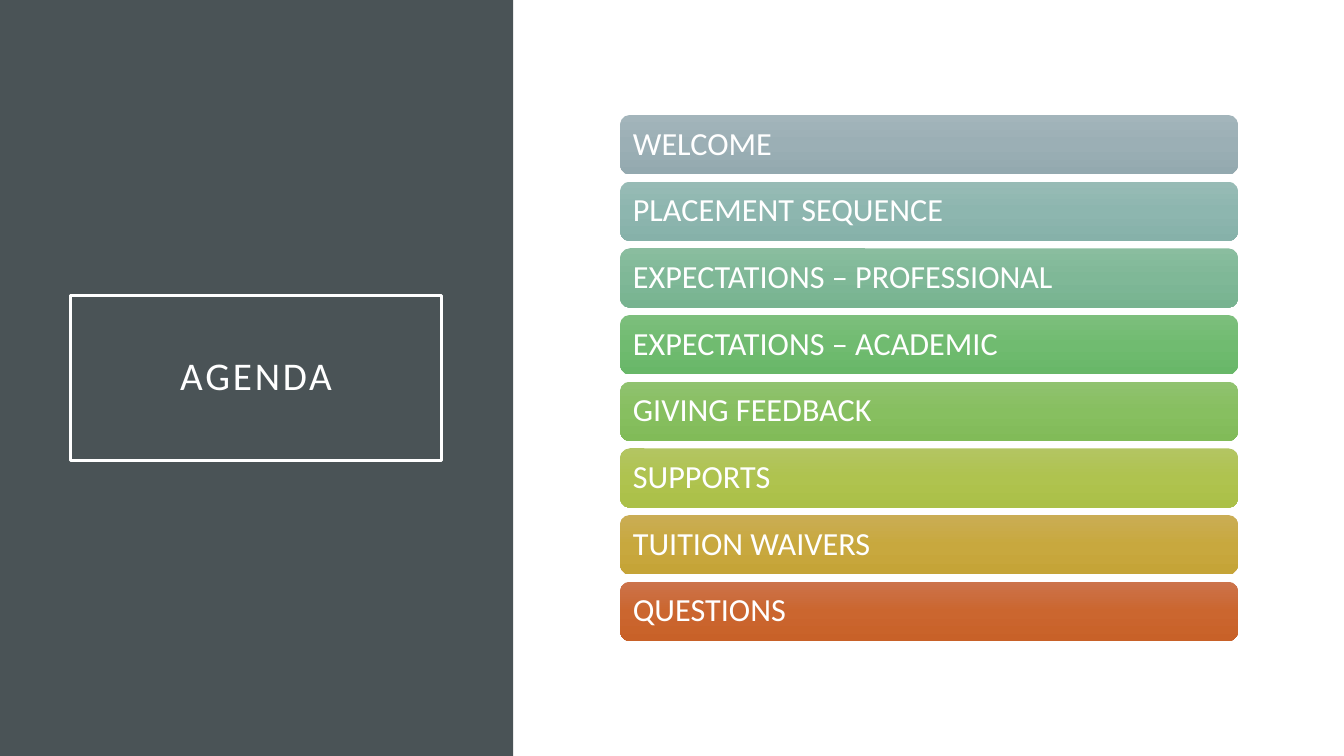
import copy
import pptx
import pptx.util
import pptx.dml.color
import pptx.enum.shapes
import pptx.enum.text
from pptx.util import Inches, Pt

FONT = "Calibri"
WHITE = "FFFFFF"
SHAPE = pptx.enum.shapes.MSO_SHAPE
ALIGN = pptx.enum.text.PP_ALIGN

# Agenda items with top, middle and bottom bar colours
ITEMS = [
    ("WELCOME", ("A3B5BB", "9BAFB5", "93A9AF")),
    ("PLACEMENT SEQUENCE", ("97BBB5", "8DB6AF", "86B1A9")),
    ("EXPECTATIONS – PROFESSIONAL", ("8ABD9F", "7FB897", "77B390")),
    ("EXPECTATIONS – ACADEMIC", ("7DBF7D", "70BB70", "68B768")),
    ("GIVING FEEDBACK", ("90C26F", "87BF60", "81BB58")),
    ("SUPPORTS", ("B3C562", "AFC34F", "ABC047")),
    ("TUITION WAIVERS", ("CAAD55", "C8A83E", "C5A437")),
    ("QUESTIONS", ("CC734B", "CB662F", "C86128")),
]
LEFT, WIDTH, HEIGHT = 6.15, 6.13, 0.59
FIRST, LAST = 1.14, 5.77


def color(code):
    return pptx.dml.color.RGBColor.from_string(code)


def write(shape, text, size, align, inset, track=0):
    frame = shape.text_frame
    frame.word_wrap = True
    frame.auto_size = pptx.enum.text.MSO_AUTO_SIZE.NONE
    frame.vertical_anchor = pptx.enum.text.MSO_ANCHOR.MIDDLE
    frame.margin_left = frame.margin_right = Inches(inset)
    frame.margin_top = frame.margin_bottom = Inches(0.1)
    para = frame.paragraphs[0]
    para.alignment = align
    para.line_spacing = 0.9
    run = para.add_run()
    run.text = text
    run.font.name = FONT
    run.font.size = Pt(size)
    run.font.color.rgb = color(WHITE)
    if track:
        run.font._element.set("spc", str(track * 100))


def shade(shape, codes):
    """Fill from top to bottom with evenly spaced colours."""
    fill = shape.fill
    fill.gradient()
    fill.gradient_angle = 270
    stops = shape._element.spPr.gradFill.gsLst
    while len(stops) < len(codes):
        stops.append(copy.deepcopy(stops[0]))
    for i, (stop, code) in enumerate(zip(fill.gradient_stops, codes)):
        stop.position = i / (len(codes) - 1)
        stop.color.rgb = color(code)


def add_box(slide, kind, x, y, w, h):
    box = slide.shapes.add_shape(kind, Inches(x), Inches(y), Inches(w), Inches(h))
    box.shadow.inherit = False
    box.line.fill.background()
    return box


def add_panel(slide):
    panel = add_box(slide, SHAPE.RECTANGLE, 0, 0, 5.09, 7.5)
    panel.fill.solid()
    panel.fill.fore_color.rgb = color("4A5356")
    # Send behind the title
    slide.shapes.title._element.addprevious(panel._element)


def set_title(slide, text):
    title = slide.shapes.title
    title.left, title.top = Inches(0.7), Inches(2.93)
    title.width, title.height = Inches(3.68), Inches(1.64)
    title.line.color.rgb = color(WHITE)
    title.line.width = Pt(2.5)
    write(title, text, 28, ALIGN.CENTER, 0.2, track=2)


def add_bar(slide, top, text, codes):
    bar = add_box(slide, SHAPE.ROUNDED_RECTANGLE, LEFT, top, WIDTH, HEIGHT)
    shade(bar, codes)
    # The rounded corners add a little to the inset
    write(bar, text, 23, ALIGN.LEFT, 0.1)


def main():
    deck = pptx.Presentation()
    deck.slide_width, deck.slide_height = Inches(13.33), Inches(7.5)
    slide = deck.slides.add_slide(deck.slide_layouts[5])

    # Left side
    set_title(slide, "AGENDA")
    add_panel(slide)

    # Agenda bars
    step = (LAST - FIRST) / (len(ITEMS) - 1)
    for i, (text, codes) in enumerate(ITEMS):
        add_bar(slide, FIRST + i * step, text, codes)

    deck.save("out.pptx")


main()
